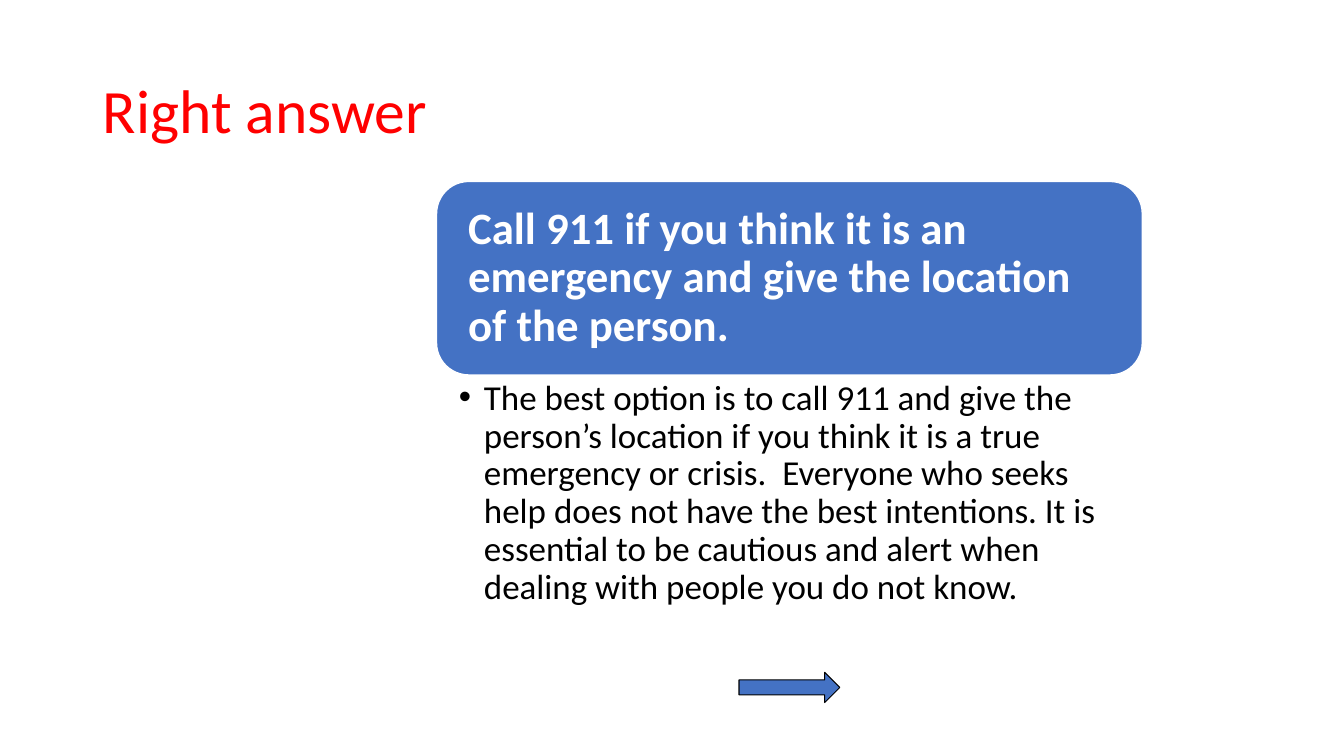
import pptx
import pptx.util
import pptx.dml.color
import pptx.enum.shapes
import pptx.enum.text

RGBColor = pptx.dml.color.RGBColor
Shape = pptx.enum.shapes.MSO_SHAPE
Align = pptx.enum.text.PP_ALIGN
Anchor = pptx.enum.text.MSO_ANCHOR
Fit = pptx.enum.text.MSO_AUTO_SIZE

RED = RGBColor(0xFF, 0x00, 0x00)
BLUE = RGBColor(0x44, 0x72, 0xC4)
WHITE = RGBColor(0xFF, 0xFF, 0xFF)
BLACK = RGBColor(0x00, 0x00, 0x00)


def px(count):
    return pptx.util.Emu(count * 9144)


class Deck:
    font = "Calibri"

    def __init__(self, width, height):
        self.file = pptx.Presentation()
        self.file.slide_width = px(width)
        self.file.slide_height = px(height)
        self.slide = self.file.slides.add_slide(self.file.slide_layouts[1])

    def place(self, shape, box):
        shape.left, shape.top, shape.width, shape.height = map(px, box)

    def label(self, shape, text, size, color, pad, anchor, bold=False):
        frame = shape.text_frame
        frame.text = text
        frame.word_wrap = True
        frame.auto_size = Fit.NONE
        frame.vertical_anchor = anchor
        (frame.margin_left, frame.margin_top,
         frame.margin_right, frame.margin_bottom) = map(px, pad)
        para = frame.paragraphs[0]
        para.alignment = Align.LEFT
        para.line_spacing = 0.9
        para.space_before = pptx.util.Pt(0)
        para.font.name = self.font
        para.font.size = pptx.util.Pt(size)
        para.font.bold = bold
        para.font.color.rgb = color
        return para

    def title(self, box, text):
        shape = self.slide.shapes.title
        self.place(shape, box)
        self.label(shape, text, 44, RED, (10, 5, 10, 5), Anchor.MIDDLE)

    def list(self, box, text):
        shape = self.slide.placeholders[1]
        self.place(shape, box)
        para = self.label(shape, text, 25, BLACK, (22, 4, 25, 4), Anchor.TOP)
        props = para._p.get_or_add_pPr()
        props.set("marL", str(px(25)))
        props.set("indent", str(px(-25)))

    def shape(self, kind, box, line, width):
        shape = self.slide.shapes.add_shape(kind, *map(px, box))
        shape.shadow.inherit = False
        shape.fill.solid()
        shape.fill.fore_color.rgb = BLUE
        shape.line.color.rgb = line
        shape.line.width = pptx.util.Pt(width)
        return shape

    def card(self, box, text):
        shape = self.shape(Shape.ROUNDED_RECTANGLE, box, WHITE, 1)
        self.label(shape, text, 32, WHITE, (22, 22, 22, 22), Anchor.MIDDLE, True)

    def arrow(self, box):
        self.shape(Shape.RIGHT_ARROW, box, BLACK, 0.75)


def main():
    deck = Deck(1333, 750)
    deck.title((92, 40, 1150, 145), "Right answer")
    deck.arrow((733, 667, 100, 30))
    deck.card((433, 180, 700, 192),
              "Call 911 if you think it is an emergency and give the "
              "location of the person.")
    deck.list((433, 373, 700, 239),
              "The best option is to call 911 and give the person’s location "
              "if you think it is a true emergency or crisis.  Everyone who "
              "seeks help does not have the best intentions. It is essential "
              "to be cautious and alert when dealing with people you do not "
              "know.")
    deck.file.save("out.pptx")


if __name__ == "__main__":
    main()
